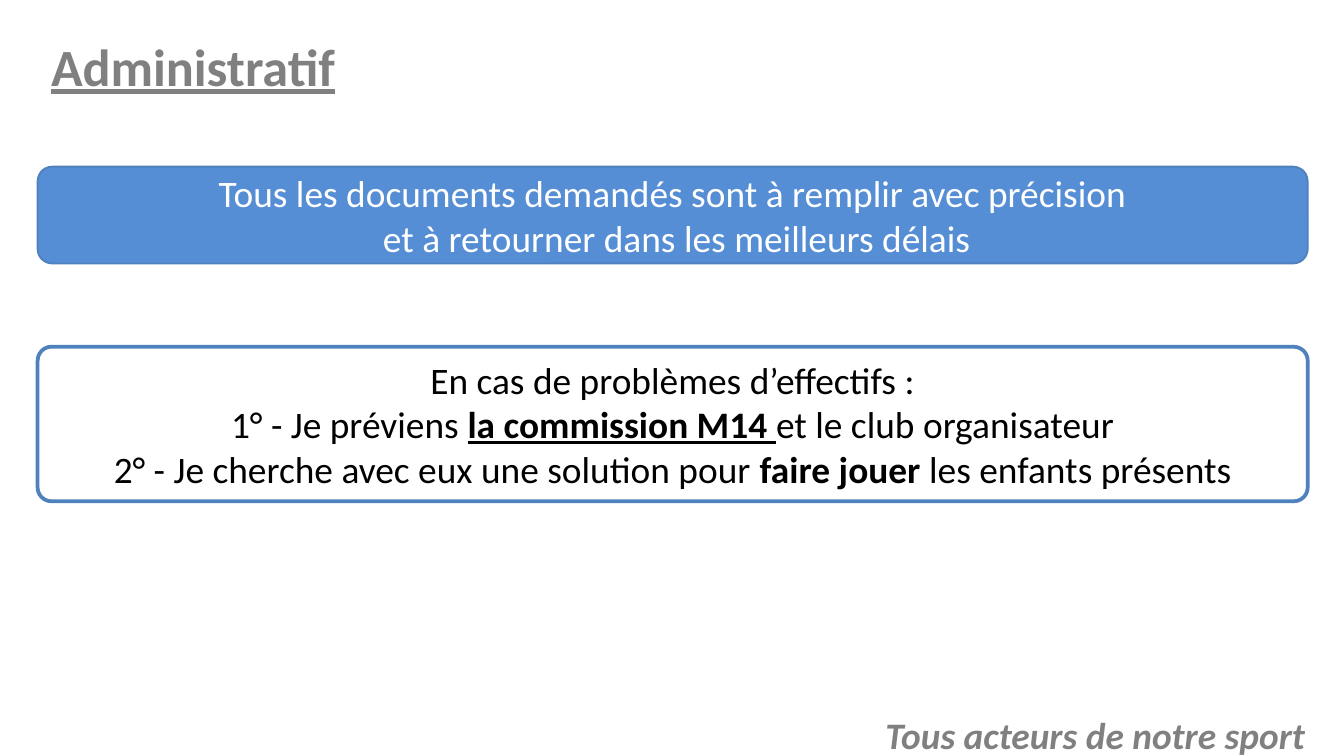
from dataclasses import dataclass
from pptx import Presentation
from pptx.dml.color import RGBColor as RGB
from pptx.enum.shapes import MSO_SHAPE as Kind
from pptx.enum.text import MSO_ANCHOR as Anchor, MSO_AUTO_SIZE as Fit, PP_ALIGN as Align
from pptx.util import Inches, Pt


@dataclass(frozen=True)
class Theme:
    font: str = "Calibri"
    blue: RGB = RGB(0x55, 0x8E, 0xD5)
    edge: RGB = RGB(0x4F, 0x81, 0xBD)
    gray: RGB = RGB(0x80, 0x80, 0x80)
    white: RGB = RGB(0xFF, 0xFF, 0xFF)
    black: RGB = RGB(0, 0, 0)
    head: int = 28
    body: int = 20


theme = Theme()


def write(frame, lines, color, size=theme.body, align=Align.CENTER,
          anchor=Anchor.MIDDLE, bold=False, italic=False, under=False):
    frame.word_wrap = True
    frame.auto_size = Fit.NONE
    frame.vertical_anchor = anchor
    for i, line in enumerate(lines):
        para = frame.add_paragraph() if i else frame.paragraphs[0]
        para.alignment = align
        for text, *marks in line:
            run = para.add_run()
            run.text = text
            font = run.font
            font.name, font.size, font.color.rgb = theme.font, Pt(size), color
            font.bold = bold or "bold" in marks
            font.italic = italic
            font.underline = under or "under" in marks


deck = Presentation()
deck.slide_width = Inches(10)
deck.slide_height = Inches(10 * 9 / 16)
slide = deck.slides.add_slide(deck.slide_layouts[5])
left, width = Inches(0.28), Inches(9.45)

title = slide.shapes.title
title.left, title.top, title.width, title.height = left, Inches(0.22), width, Inches(0.53)
write(title.text_frame, [[("Administratif",)]], theme.gray, size=theme.head,
      align=Align.LEFT, bold=True, under=True)

rules = [
    [("Tous les documents demandés sont à remplir avec précision",)],
    [(" et à retourner dans les meilleurs délais",)],
]
steps = [
    [("En cas de problèmes d’effectifs :",)],
    [("1° - Je préviens ",), ("la commission M14 ", "bold", "under"),
     ("et le club organisateur",)],
    [("2° - Je cherche avec eux une solution pour ",), ("faire jouer ", "bold"),
     ("les enfants présents",)],
]
panels = [
    (1.24, 0.72, 0.15, theme.blue, 1, theme.white, rules),
    (2.58, 1.15, 0.09, theme.white, 2, theme.black, steps),
]
for top, height, curve, fill, weight, color, lines in panels:
    panel = slide.shapes.add_shape(Kind.ROUNDED_RECTANGLE, left, Inches(top), width, Inches(height))
    panel.adjustments[0] = curve
    panel.shadow.inherit = False
    panel.fill.solid()
    panel.fill.fore_color.rgb = fill
    panel.line.color.rgb = theme.edge
    panel.line.width = Pt(weight)
    write(panel.text_frame, lines, color)

motto = slide.shapes.add_textbox(Inches(6.42), Inches(5.25), Inches(3.46), Inches(0.37))
write(motto.text_frame, [[("Tous acteurs de notre sport",)]], theme.gray,
      anchor=Anchor.TOP, bold=True, italic=True)

deck.save("out.pptx")
